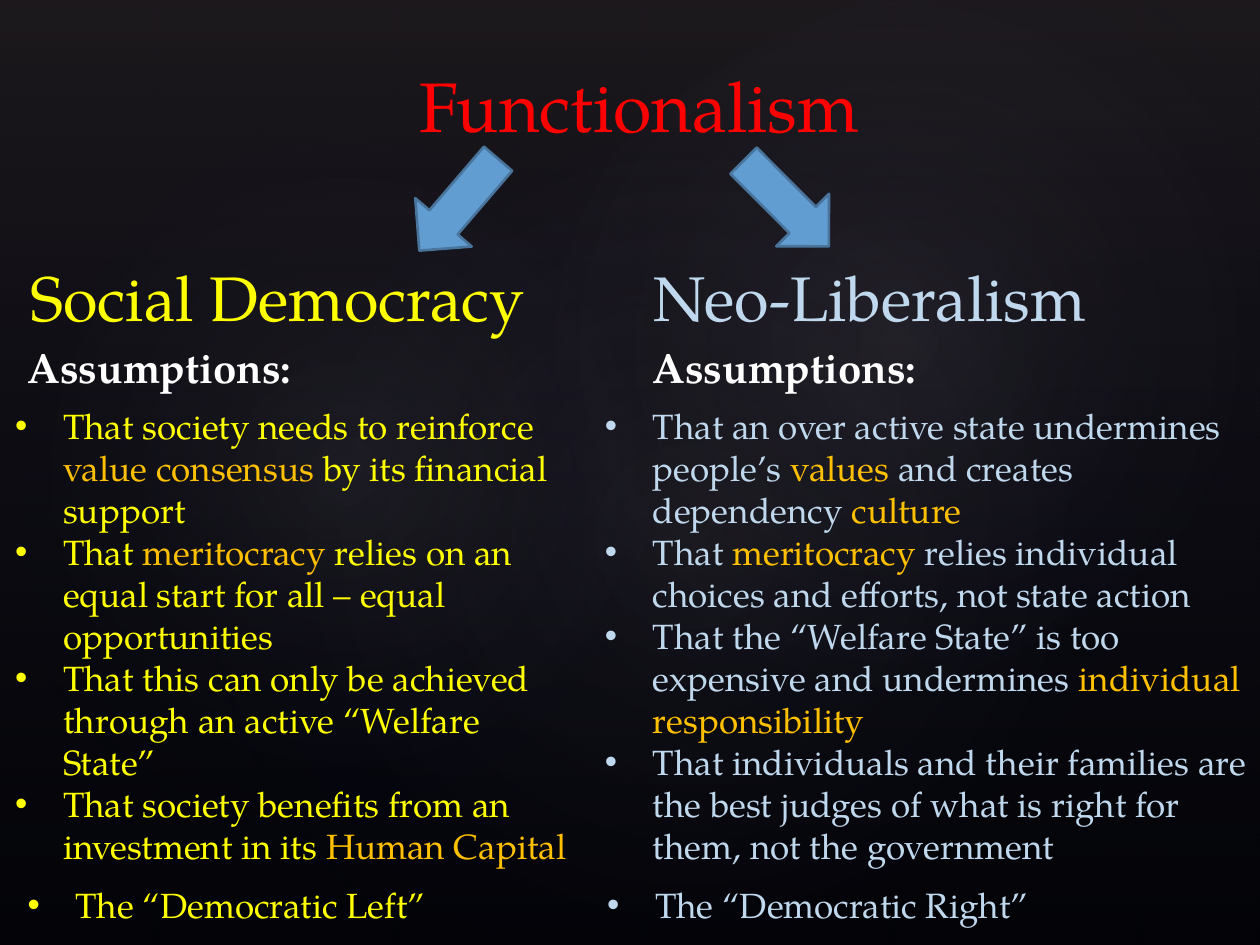
import pptx
import pptx.dml.color
import pptx.enum.shapes
import pptx.enum.text
import pptx.oxml
import pptx.oxml.ns
import pptx.util
from dataclasses import dataclass

Inches = pptx.util.Inches
Pt = pptx.util.Pt
ALIGN = pptx.enum.text.PP_ALIGN
SHAPE = pptx.enum.shapes.MSO_SHAPE


@dataclass(frozen=True)
class Theme:
    """Colours, font and type sizes of the slide."""
    font: str = "TeX Gyre Pagella"
    background: str = "000000"
    title: str = "FF0000"
    left: str = "FFFF00"
    right: str = "C0D8ED"
    emphasis: str = "FFC000"
    label: str = "FFFFFF"
    arrow: str = "629DD1"
    arrow_edge: str = "49749B"
    title_size: int = 40
    heading_size: int = 36
    label_size: int = 24
    body_size: int = 20


THEME = Theme()

GLOWS = [
    (SHAPE.RECTANGLE, (0, 0, 10, 7.5), 0, "504652", 36, 100, 10),
    (SHAPE.OVAL, (1.5, 1.14, 7.92, 6.24), 328.7, "C4BCC6", 7, 58, 0),
    (SHAPE.OVAL, (-0.3, 1.28, 6.06, 4.9), 294.3, "C4BCC6", 8, 58, 0),
    (SHAPE.OVAL, (3.58, 0.13, 7.09, 5.2), 328.7, "C4BCC6", 8, 58, 0),
]
GLOW_END = "242852"

ARROWS = [((3.16, 1.33, 0.96, 0.59), 130.6), ((5.76, 1.32, 0.96, 0.59), 45.1)]

SOCIAL_DEMOCRACY = [
    "That society needs to reinforce *value consensus *by its financial support",
    "That *meritocracy *relies on an equal start for all – equal opportunities",
    "That this can only be achieved through an active “Welfare State”",
    "That society benefits from an investment in its *Human Capital",
]
NEO_LIBERALISM = [
    "That an over active state undermines people’s *values *and creates dependency *culture",
    "That *meritocracy *relies individual choices and efforts, not state action",
    "That the “Welfare State” is too expensive and undermines *individual responsibility",
    "That individuals and their families are the best judges of what is right for them, "
    "not the government",
]


def rgb(colour):
    """Turn a hex string into a colour."""
    return pptx.dml.color.RGBColor.from_string(colour)


def apply_format(target, values):
    """Set every attribute in values on target."""
    for name, value in values.items():
        setattr(target, name, value)


def place(shape, box):
    """Give a shape its left, top, width and height in inches."""
    apply_format(shape, dict(zip(("left", "top", "width", "height"), map(Inches, box))))


def add_bullet(paragraph):
    """Give a paragraph a round bullet with a hanging indent."""
    properties = paragraph._p.get_or_add_pPr()
    indent = Inches(0.38)
    properties.set("marL", str(indent))
    properties.set("indent", str(-indent))
    ns = pptx.oxml.ns.nsdecls("a")
    properties.append(pptx.oxml.parse_xml(f'<a:buFont {ns} typeface="Arial"/>'))
    properties.append(pptx.oxml.parse_xml(f'<a:buChar {ns} char="•"/>'))


def write(shape, box, lines, size, colour, align=ALIGN.LEFT, bold=False, bullets=False):
    """Place a text shape and fill it, with emphasis between asterisks."""
    place(shape, box)
    frame = shape.text_frame
    apply_format(frame, {
        "word_wrap": True,
        "auto_size": pptx.enum.text.MSO_AUTO_SIZE.NONE,
        "vertical_anchor": pptx.enum.text.MSO_ANCHOR.TOP,
        "margin_left": Inches(0.1), "margin_right": Inches(0.1),
        "margin_top": Inches(0.05), "margin_bottom": Inches(0.05),
    })
    for number, line in enumerate(lines):
        paragraph = frame.paragraphs[0] if number == 0 else frame.add_paragraph()
        if bullets:
            add_bullet(paragraph)
        apply_format(paragraph, {"alignment": align, "space_before": Pt(0),
                                 "space_after": Pt(0), "line_spacing": 1.0})
        for part, text in enumerate(line.split("*")):
            run = paragraph.add_run()
            run.text = text
            apply_format(run.font, {"name": THEME.font, "size": Pt(size), "bold": bold})
            run.font.color.rgb = rgb(THEME.emphasis if part % 2 else colour)


def add_glow(slide, depth, kind, box, rotation, colour, alpha, reach, end_alpha):
    """Add a translucent gradient shape behind the text."""
    glow = slide.shapes.add_shape(kind, *map(Inches, box))
    apply_format(glow, {"rotation": rotation})
    glow.shadow.inherit = False
    glow.line.fill.background()
    glow.fill.background()
    shade = ('<a:lin ang="5400000" scaled="0"/>' if kind == SHAPE.RECTANGLE else
             '<a:path path="circle"><a:fillToRect l="50000" t="50000" '
             'r="50000" b="50000"/></a:path>')
    stops = "".join(
        f'<a:gs pos="{position * 1000}"><a:srgbClr val="{tone}">'
        f'<a:alpha val="{opacity * 1000}"/></a:srgbClr></a:gs>'
        for position, tone, opacity in ((0, colour, alpha), (reach, GLOW_END, end_alpha)))
    gradient = pptx.oxml.parse_xml(
        f'<a:gradFill {pptx.oxml.ns.nsdecls("a")} rotWithShape="1">'
        f'<a:gsLst>{stops}</a:gsLst>{shade}</a:gradFill>')
    properties = glow._element.spPr
    properties.replace(properties.find(pptx.oxml.ns.qn("a:noFill")), gradient)
    slide.shapes._spTree.insert(2 + depth, glow._element)


def add_arrow(slide, box, rotation):
    """Add a block arrow from the title towards a column."""
    arrow = slide.shapes.add_shape(SHAPE.RIGHT_ARROW, *map(Inches, box))
    arrow.rotation = rotation
    arrow.shadow.inherit = False
    arrow.fill.solid()
    arrow.fill.fore_color.rgb = rgb(THEME.arrow)
    arrow.line.color.rgb = rgb(THEME.arrow_edge)
    arrow.line.width = Pt(1.5)


def add_column(slide, heading, body, lefts, body_width, colour, title, points, closing):
    """Add a heading, a label, the assumptions and a closing point."""
    heading_left, label_left, body_left, closing_left = lefts
    label, ending = (slide.shapes.add_textbox(0, 0, 0, 0) for _ in range(2))
    write(heading, (heading_left, 2, 4.41, 0.71), [title], THEME.heading_size, colour,
          align=ALIGN.CENTER)
    write(label, (label_left, 2.66, 4.41, 0.5), ["Assumptions:"], THEME.label_size,
          THEME.label, bold=True)
    write(body, (body_left, 3.16, body_width, 3.8), points, THEME.body_size, colour,
          bullets=True)
    write(ending, (closing_left, 6.96, 4.41, 0.44), [closing], THEME.body_size, colour,
          bullets=True)


def main():
    """Build and save the slide."""
    deck = pptx.Presentation()
    apply_format(deck, {"slide_width": Inches(10), "slide_height": Inches(7.5)})
    slide = deck.slides.add_slide(deck.slide_layouts.get_by_name("Comparison"))
    slide.background.fill.solid()
    slide.background.fill.fore_color.rgb = rgb(THEME.background)
    title, left_heading, left_body, right_heading, right_body = slide.placeholders
    for depth, glow in enumerate(GLOWS):
        add_glow(slide, depth, *glow)
    write(title, (2.87, 0.45, 4.41, 0.77), ["Functionalism"], THEME.title_size,
          THEME.title, align=ALIGN.CENTER)
    for box, rotation in ARROWS:
        add_arrow(slide, box, rotation)
    add_column(slide, left_heading, left_body, (0, 0.12, 0.02, 0.12), 4.68, THEME.left,
               "Social Democracy", SOCIAL_DEMOCRACY, "The “Democratic Left”")
    add_column(slide, right_heading, right_body, (4.7, 5.08, 4.7, 4.72), 5.3, THEME.right,
               "Neo-Liberalism", NEO_LIBERALISM, "The “Democratic Right”")
    deck.save("out.pptx")


if __name__ == "__main__":
    main()
